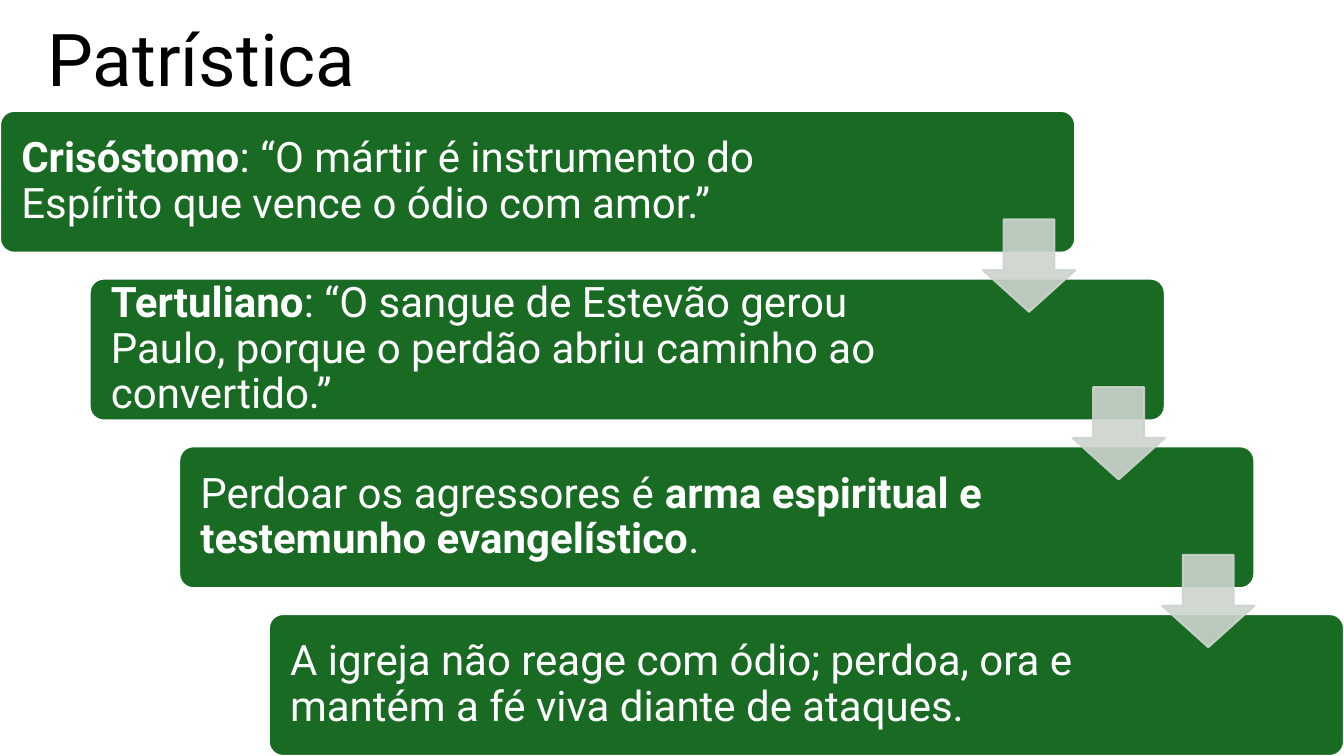
import pptx
import pptx.dml.color
import pptx.enum.shapes
import pptx.enum.text
import pptx.oxml
import pptx.oxml.ns
import pptx.util

SLIDE_W, SLIDE_H = 13.33, 7.5
FONT = "Roboto"
GREEN, PALE, WHITE, BLACK = "196B24", "CCD4CD", "FFFFFF", "000000"
ARROW_OPACITY = 90
SHAPES = pptx.enum.shapes.MSO_SHAPE
TEXT = pptx.enum.text
inches = pptx.util.Inches

# Each quotation is a list of (words, bold) runs.
QUOTES = [
    [("Crisóstomo", True),
     (": “O mártir é instrumento do Espírito que vence o ódio com amor.”", False)],
    [("Tertuliano", True),
     (": “O sangue de Estevão gerou Paulo, porque o perdão abriu caminho ao convertido.”", False)],
    [("Perdoar os agressores é ", False),
     ("arma espiritual e testemunho evangelístico", True), (".", False)],
    [("A igreja não reage com ódio; perdoa, ora e mantém a fé viva diante de ataques.", False)],
]


def color(hex_string):
    return pptx.dml.color.RGBColor.from_string(hex_string)


def set_all(target, values):
    for name, value in values.items():
        setattr(target, name, value)


def write(frame, runs, size, ink, frame_format):
    set_all(frame, {"word_wrap": True, "auto_size": TEXT.MSO_AUTO_SIZE.NONE,
                    "vertical_anchor": TEXT.MSO_ANCHOR.MIDDLE, **frame_format})
    paragraph = frame.paragraphs[0]
    set_all(paragraph, {"alignment": TEXT.PP_ALIGN.LEFT, "line_spacing": 0.9})
    for words, bold in runs:
        run = paragraph.add_run()
        run.text = words
        set_all(run.font, {"name": FONT, "size": pptx.util.Pt(size), "bold": bold})
        run.font.color.rgb = color(ink)


def add_block(slide, kind, box, adjustments, fill, line):
    block = slide.shapes.add_shape(kind, *map(inches, box))
    block.shadow.inherit = False
    for index, value in enumerate(adjustments):
        block.adjustments[index] = value
    block.fill.solid()
    block.fill.fore_color.rgb = color(fill)
    block.line.color.rgb = color(line)
    block.line.width = pptx.util.Pt(1.5)
    return block


def make_translucent(block, percent):
    properties = block.fill._xPr
    for tint in properties.iter(pptx.oxml.ns.qn("a:srgbClr")):
        tint.append(pptx.oxml.parse_xml(
            f'<a:alpha {pptx.oxml.ns.nsdecls("a")} val="{percent * 1000}"/>'))


def add_title(slide, box):
    title = slide.shapes.title
    set_all(title, dict(zip(("left", "top", "width", "height"), map(inches, box))))
    write(title.text_frame, [("Patrística", False)], 52, BLACK, {})


def add_staircase(slide, box, quotes):
    """Cards step down to the right, each joined to the next by an arrow."""
    left, top, width, height = box
    card_w, card_h = 0.8 * width, 0.22 * height
    step_x = (width - card_w) / (len(quotes) - 1)
    step_y = (height - card_h) / (len(quotes) - 1)
    corners = [(left + i * step_x, top + i * step_y) for i in range(len(quotes))]
    insets = {"margin_left": inches(0.17), "margin_right": inches(1.9),
              "margin_top": inches(0.04), "margin_bottom": inches(0.04)}

    for (x, y), quote in zip(corners, quotes):
        card = add_block(slide, SHAPES.ROUNDED_RECTANGLE, (x, y, card_w, card_h),
                         [0.1], GREEN, WHITE)
        write(card.text_frame, quote, 30, WHITE, insets)

    arrow = 0.65 * card_h
    for x, y in corners[:-1]:
        pointer = add_block(slide, SHAPES.DOWN_ARROW,
                            (x + card_w - arrow, y + 0.765 * card_h, arrow, arrow),
                            [0.45, 0.55], PALE, PALE)
        # The preset lists the head length second in drawing order: shaft, then head.
        pointer.adjustments[0], pointer.adjustments[1] = 0.55, 0.45
        make_translucent(pointer, ARROW_OPACITY)


def main():
    deck = pptx.Presentation()
    set_all(deck, {"slide_width": inches(SLIDE_W), "slide_height": inches(SLIDE_H)})
    slide = deck.slides.add_slide(deck.slide_layouts.get_by_name("Title Only"))
    slide.background.fill.solid()
    slide.background.fill.fore_color.rgb = color(WHITE)
    add_title(slide, (0.37, 0, 11.5, 1.24))
    add_staircase(slide, (0, 1.1, SLIDE_W, SLIDE_H - 1.1), QUOTES)
    deck.save("out.pptx")


if __name__ == "__main__":
    main()
